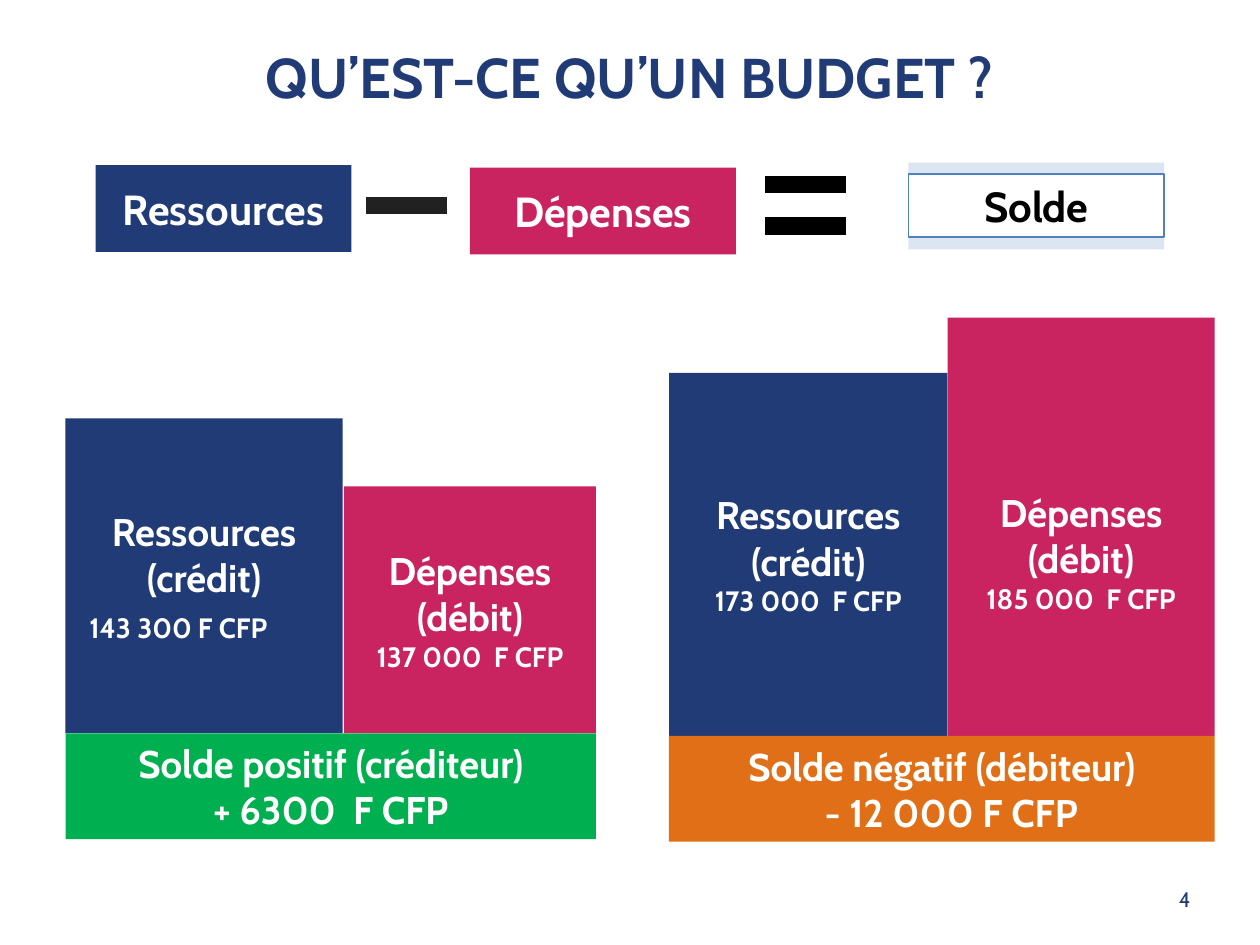
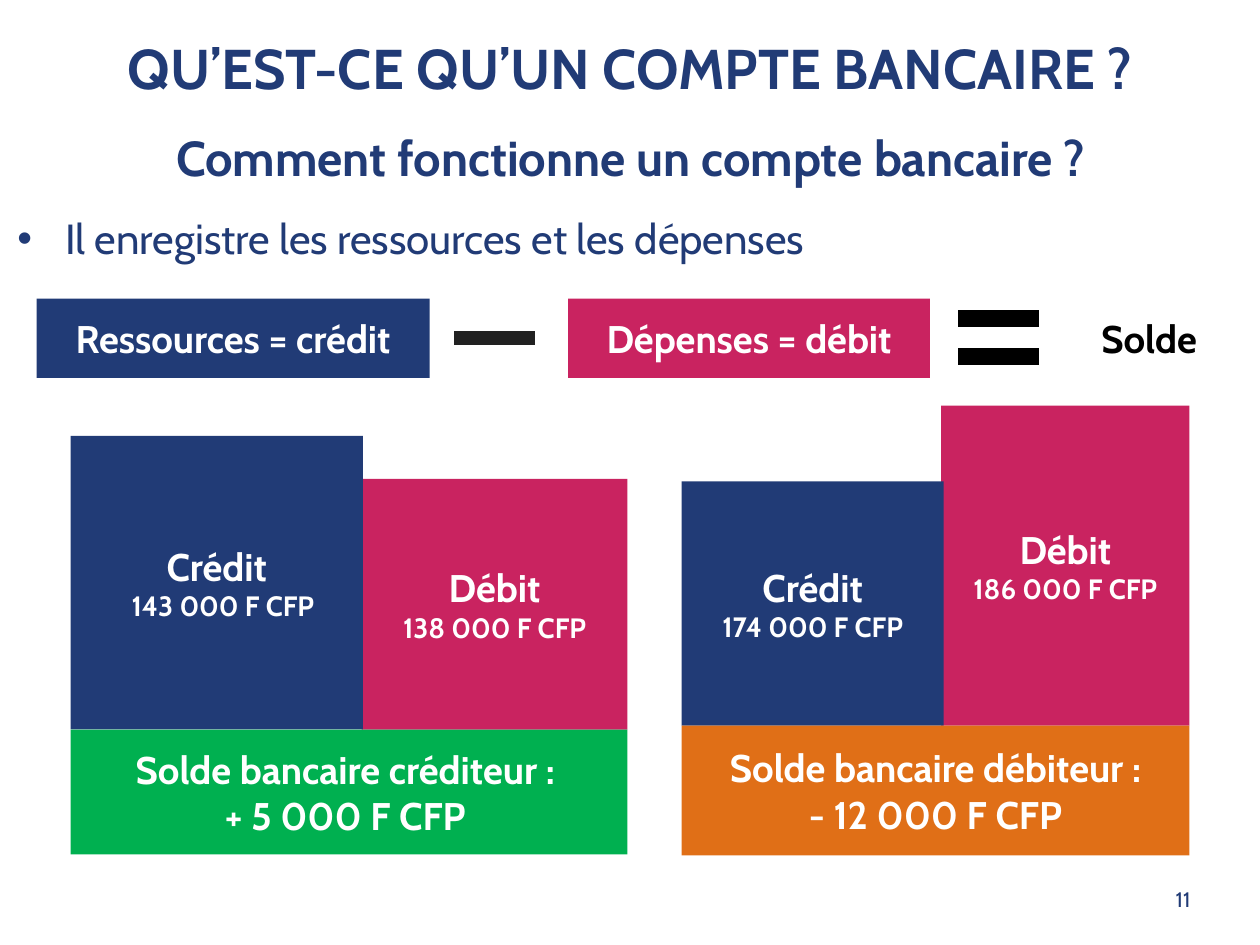
"""Builds two slides on budgets and bank accounts: resources minus expenses equals balance."""
from pptx import Presentation
from pptx.dml.color import RGBColor
from pptx.enum.shapes import MSO_SHAPE
from pptx.enum.text import MSO_ANCHOR, PP_ALIGN
from pptx.util import Inches, Pt
from lxml.etree import SubElement
from pptx.oxml.ns import qn

FONT = "Cabin"
COLORS = {"credit": "213B76", "debit": "C92360", "positive": "00B050", "negative": "E06F17",
          "white": "FFFFFF", "black": "000000", "minus": "212121", "halo": "DCE6F2",
          "outline": "4F81BD"}
LABEL, AMOUNT = 22, 16

# Each text line is (text, size) or (text, size, options).
BUDGET = {
    "title": ("QU’EST-CE QU’UN BUDGET ?", (1.38, 0.29, 7.24, 0.72)),
    "number": "4",
    "equation": {
        "size": 24,
        "terms": [("Ressources", "credit", (0.76, 1.31, 2.03, 0.69)),
                  ("Dépenses", "debit", (3.73, 1.33, 2.11, 0.69))],
        "minus": (2.89, 1.55, 0.67, 0.16),
        "equals": (6.06, 1.38, 0.67, 0.5, 0.17),
        "halo": (7.21, 1.29, 2.03, 0.69),
        "balance": (7.21, 1.38, 2.03, 0.5),
    },
    "accounts": [
        {"left": 0.52, "width": 4.21, "base": 5.82, "height": 0.84, "state": "positive",
         "credit": (2.2, 3.32, [("Ressources", LABEL), ("(crédit)", LABEL),
                                ("143 300 F CFP", AMOUNT,
                                 {"align": PP_ALIGN.LEFT, "shift": 0.14, "before": 6})]),
         "debit": (2, 3.86, [("Dépenses", LABEL), ("(débit)", LABEL),
                             ("137 000  F CFP", AMOUNT)]),
         "balance": [("Solde positif (créditeur)", LABEL), ("+ 6300  F CFP", LABEL)]},
        {"left": 5.31, "width": 4.33, "base": 5.84, "height": 0.84, "state": "negative",
         "credit": (2.21, 2.96, [("Ressources", LABEL), ("(crédit)", LABEL),
                                 ("173 000  F CFP", AMOUNT)]),
         "debit": (2.12, 2.52, [("Dépenses", LABEL), ("(débit)", LABEL),
                                ("185 000  F CFP", AMOUNT)]),
         "debit_drop": 0.4,
         "balance": [("Solde négatif (débiteur)", LABEL),
                     ("- 12 000 F CFP", LABEL, {"shift": 0.15})]},
    ],
}

BANK = {
    "title": ("QU’EST-CE QU’UN COMPTE BANCAIRE ?", (0.28, 0.22, 9.45, 0.66)),
    "number": "11",
    "subtitle": ("Comment fonctionne un compte bancaire ?", (0.8, 0.96, 8.41, 0.57)),
    "point": ("Il enregistre les ressources et les dépenses", (0.04, 1.64, 9.56, 0.5)),
    "equation": {
        "size": 22,
        "terms": [("Ressources = crédit", "credit", (0.29, 2.37, 3.12, 0.63)),
                  ("Dépenses = débit", "debit", (4.51, 2.37, 2.87, 0.63))],
        "minus": (3.59, 2.61, 0.67, 0.14),
        "equals": (7.59, 2.45, 0.67, 0.46, 0.16),
        "balance": (8.47, 2.37, 1.3, 0.63),
    },
    "accounts": [
        {"left": 0.56, "width": 4.42, "base": 5.79, "height": 0.99, "state": "positive",
         "credit": (2.32, 3.46, [("Crédit", LABEL), ("143 000 F CFP", AMOUNT, {"shift": 0.1})]),
         "debit": (2.11, 3.8, [("Débit", LABEL), ("138 000 F CFP", AMOUNT)]),
         "balance": [("Solde bancaire créditeur :", LABEL, {"shift": -0.06}),
                     ("+ 5 000 F CFP", LABEL, {"shift": -0.06})]},
        {"left": 5.41, "width": 4.03, "base": 5.76, "height": 1.03, "state": "negative",
         "credit": (2.08, 3.82, [("Crédit", LABEL), ("174 000 F CFP", AMOUNT)]),
         "debit": (1.97, 3.22, [("Débit", LABEL), ("186 000 F CFP", AMOUNT)]),
         "balance": [("Solde bancaire débiteur :", LABEL), ("- 12 000 F CFP", LABEL)]},
    ],
}


def rgb(name):
    return RGBColor.from_string(COLORS[name])


def paint(shape, fill, outline=None, weight=1):
    shape.shadow.inherit = False
    shape.fill.solid()
    shape.fill.fore_color.rgb = rgb(fill)
    if outline:
        shape.line.color.rgb = rgb(outline)
        shape.line.width = Pt(weight)
    else:
        shape.line.fill.background()


def write(frame, lines, color, bold=True, align=PP_ALIGN.CENTER, side=0.05, drop=0):
    frame.word_wrap = True
    frame.margin_left = frame.margin_right = Inches(side)
    frame.margin_top, frame.margin_bottom = Inches(0.05 + drop), Inches(0.05)
    for index, (text, size, *options) in enumerate(lines):
        option = options[0] if options else {}
        paragraph = frame.add_paragraph() if index else frame.paragraphs[0]
        paragraph.alignment = option.get("align", align)
        if "before" in option:
            paragraph.space_before = Pt(option["before"])
        shift = option.get("shift", 0)
        if shift:
            edge = "marL" if shift > 0 else "marR"
            paragraph._p.get_or_add_pPr().set(edge, str(Inches(abs(shift))))
        run = paragraph.add_run()
        run.text = text
        run.font.name, run.font.size, run.font.bold = FONT, Pt(size), bold
        run.font.color.rgb = rgb(color)


def add_block(slide, box, fill, lines=(), color="white", outline=None, weight=1, drop=0):
    block = slide.shapes.add_shape(MSO_SHAPE.RECTANGLE, *map(Inches, box))
    paint(block, fill, outline, weight)
    block.text_frame.vertical_anchor = MSO_ANCHOR.MIDDLE
    write(block.text_frame, lines, color, drop=drop)


def add_label(slide, box, text, size, **style):
    frame = slide.shapes.add_textbox(*map(Inches, box)).text_frame
    write(frame, [(text, size)], "credit", **style)
    return frame


def add_equals(slide, left, top, width, height, thickness):
    def corners(y):
        return [(Inches(x), Inches(v)) for x, v in
                ((left, y), (left + width, y), (left + width, y + thickness),
                 (left, y + thickness))]

    upper, lower = corners(top), corners(top + height - thickness)
    builder = slide.shapes.build_freeform(*upper[0])
    builder.add_line_segments(upper[1:], close=True)
    builder.move_to(*lower[0])
    builder.add_line_segments(lower[1:], close=True)
    paint(builder.convert_to_shape(), "black", "white", 2)


def add_equation(slide, equation):
    size = equation["size"]
    for text, fill, box in equation["terms"]:
        add_block(slide, box, fill, [(text, size)])
    add_block(slide, equation["minus"], "minus", outline="white", weight=2)
    add_equals(slide, *equation["equals"])
    halo = equation.get("halo")
    if halo:
        add_block(slide, halo, "halo")
    add_block(slide, equation["balance"], "white", [("Solde", size)], "black",
              outline="outline" if halo else None)


def add_account(slide, account):
    left, width, base = account["left"], account["width"], account["base"]
    debit_width, debit_top, debit_lines = account["debit"]
    add_block(slide, (left + width - debit_width, debit_top, debit_width, base - debit_top),
              "debit", debit_lines, drop=account.get("debit_drop", 0))
    credit_width, credit_top, credit_lines = account["credit"]
    add_block(slide, (left, credit_top, credit_width, base - credit_top), "credit", credit_lines)
    add_block(slide, (left, base, width, account["height"]), account["state"],
              account["balance"])


def add_point(slide, text, box):
    frame = add_label(slide, box, text, 24, bold=False, align=PP_ALIGN.LEFT, side=0.1)
    properties = frame.paragraphs[0]._p.get_or_add_pPr()
    properties.set("marL", str(Inches(0.38)))
    properties.set("indent", str(-Inches(0.38)))
    SubElement(properties, qn("a:buFont")).set("typeface", "Arial")
    SubElement(properties, qn("a:buChar")).set("char", "•")


def add_page(deck, page):
    slide = deck.slides.add_slide(deck.slide_layouts[6])
    title, title_box = page["title"]
    add_label(slide, title_box, title, 32, side=0.1)
    if "subtitle" in page:
        subtitle, subtitle_box = page["subtitle"]
        add_label(slide, subtitle_box, subtitle, 28)
    if "point" in page:
        add_point(slide, *page["point"])
    add_equation(slide, page["equation"])
    for account in page["accounts"]:
        add_account(slide, account)
    number = add_label(slide, (9.2, 6.99, 0.3, 0.3), page["number"], 12, bold=False,
                       align=PP_ALIGN.RIGHT)
    number.vertical_anchor = MSO_ANCHOR.MIDDLE
    number.word_wrap = False


def main():
    deck = Presentation()
    deck.slide_width, deck.slide_height = Inches(10), Inches(7.5)
    for page in (BUDGET, BANK):
        add_page(deck, page)
    deck.save("out.pptx")


if __name__ == "__main__":
    main()
